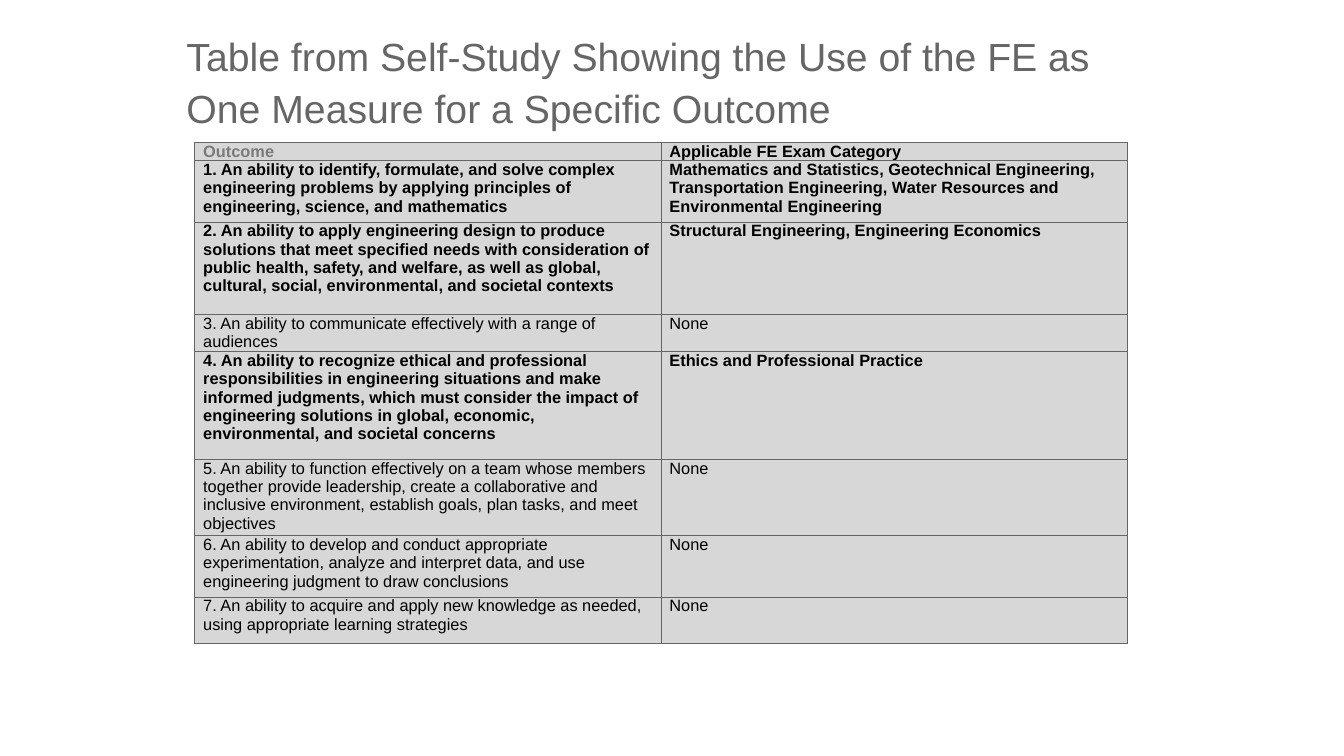
"""Build a slide tabulating FE exam categories for each student outcome."""
import pptx
import pptx.dml.color
import pptx.enum.text
import pptx.oxml
import pptx.oxml.ns
import pptx.util

Pt = pptx.util.Pt
RGB = pptx.dml.color.RGBColor.from_string
ALIGN = pptx.enum.text.PP_ALIGN
ANCHOR = pptx.enum.text.MSO_ANCHOR

HEADING = "Table from Self-Study Showing the Use of the FE as One Measure for a Specific Outcome"
HEADERS = ("Outcome", "Applicable FE Exam Category")
NO_CATEGORY = "None"
OUTCOMES = [
    ("1. An ability to identify, formulate, and solve complex engineering problems by applying "
     "principles of engineering, science, and mathematics",
     "Mathematics and Statistics, Geotechnical Engineering, Transportation Engineering, "
     "Water Resources and Environmental Engineering"),
    ("2. An ability to apply engineering design to produce solutions that meet specified needs "
     "with consideration of public health, safety, and welfare, as well as global, cultural, "
     "social, environmental, and societal contexts",
     "Structural Engineering, Engineering Economics"),
    ("3. An ability to communicate effectively with a range of audiences", NO_CATEGORY),
    ("4. An ability to recognize ethical and professional responsibilities in engineering "
     "situations and make informed judgments, which must consider the impact of engineering "
     "solutions in global, economic, environmental, and societal concerns",
     "Ethics and Professional Practice"),
    ("5. An ability to function effectively on a team whose members together provide leadership, "
     "create a collaborative and inclusive environment, establish goals, plan tasks, and meet "
     "objectives", NO_CATEGORY),
    ("6. An ability to develop and conduct appropriate experimentation, analyze and interpret "
     "data, and use engineering judgment to draw conclusions", NO_CATEGORY),
    ("7. An ability to acquire and apply new knowledge as needed, using appropriate learning "
     "strategies", NO_CATEGORY),
]
ROW_HEIGHTS = (15, 52.5, 79.5, 26.5, 92.5, 65.5, 52.5, 39.5)
COLUMN_WIDTH = 399.6

THEME = {
    "font": "Arial", "heading_size": 33.6, "table_size": 14, "border_width": 0.75,
    "heading": "666666", "muted": "7A7A7A", "text": "000000",
    "cell": "D7D7D7", "border": "656565",
}


def write(frame, text, size, color, bold=False, align=ALIGN.LEFT, spacing=None):
    """Put one formatted paragraph in a text frame."""
    frame.word_wrap = True
    paragraph = frame.paragraphs[0]
    paragraph.alignment = align
    paragraph.line_spacing = spacing
    run = paragraph.add_run()
    run.text = text
    run.font.name = THEME["font"]
    run.font.size = Pt(size)
    run.font.bold = bold
    run.font.color.rgb = RGB(color)


def style_cell(cell):
    """Give a cell its margins, borders and fill."""
    cell.margin_left = cell.margin_right = Pt(7.2)
    cell.margin_top = cell.margin_bottom = 0
    cell.vertical_anchor = ANCHOR.TOP
    properties = cell._tc.get_or_add_tcPr()
    for side in ("lnL", "lnR", "lnT", "lnB"):
        properties.append(pptx.oxml.parse_xml(
            f'<a:{side} {pptx.oxml.ns.nsdecls("a")} w="{Pt(THEME["border_width"])}">'
            f'<a:solidFill><a:srgbClr val="{THEME["border"]}"/></a:solidFill></a:{side}>'))
    cell.fill.solid()
    cell.fill.fore_color.rgb = RGB(THEME["cell"])


def add_heading(slide):
    """Place and fill the title."""
    heading = slide.shapes.title
    heading.left, heading.top = Pt(149.8), Pt(14.4)
    heading.width, heading.height = Pt(833.8), Pt(108)
    frame = heading.text_frame
    frame.auto_size = pptx.enum.text.MSO_AUTO_SIZE.NONE
    frame.vertical_anchor = ANCHOR.MIDDLE
    frame.margin_left = frame.margin_right = Pt(10)
    frame.margin_top = frame.margin_bottom = Pt(5)
    write(frame, HEADING, THEME["heading_size"], THEME["heading"], spacing=1.1)


def add_outcomes(slide):
    """Draw the outcome table, with rows that have a category in bold."""
    rows = [HEADERS, *OUTCOMES]
    outcomes = slide.shapes.add_table(
        len(rows), len(HEADERS), Pt(167), Pt(122),
        Pt(COLUMN_WIDTH * len(HEADERS)), Pt(sum(ROW_HEIGHTS))).table
    for column in outcomes.columns:
        column.width = Pt(COLUMN_WIDTH)
    for r, (row, height) in enumerate(zip(rows, ROW_HEIGHTS)):
        outcomes.rows[r].height = Pt(height)
        for c, text in enumerate(row):
            cell = outcomes.cell(r, c)
            style_cell(cell)
            write(cell.text_frame, text, THEME["table_size"],
                  THEME["muted" if r == c == 0 else "text"],
                  bold=row[1] != NO_CATEGORY,
                  align=ALIGN.JUSTIFY if r == 0 else ALIGN.LEFT)


def main():
    """Build and save the presentation."""
    deck = pptx.Presentation()
    deck.slide_width, deck.slide_height = Pt(1152), Pt(648)
    slide = deck.slides.add_slide(deck.slide_layouts.get_by_name("Title Only"))
    add_heading(slide)
    add_outcomes(slide)
    deck.save("out.pptx")


if __name__ == "__main__":
    main()
